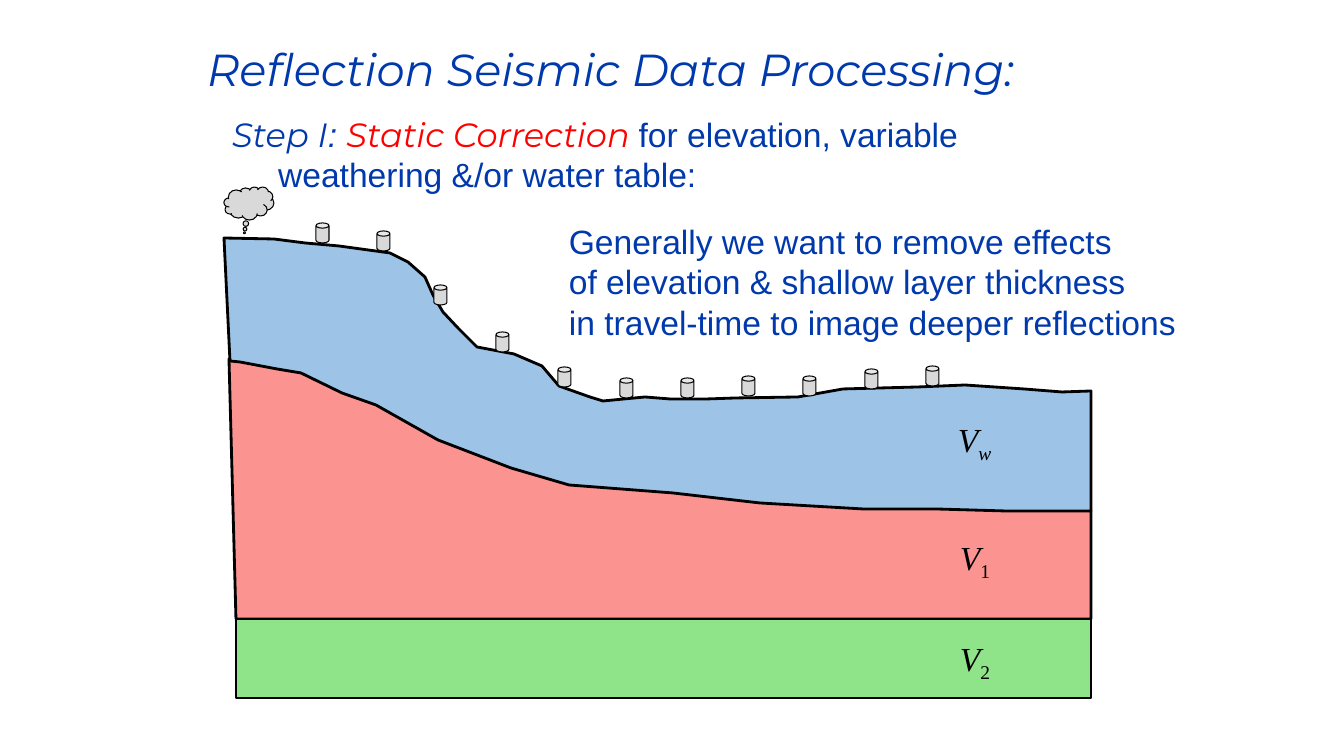
from dataclasses import dataclass
from typing import NamedTuple

from pptx import Presentation
from pptx import util as u
from pptx.dml.color import RGBColor
from pptx.enum import shapes, text
from pptx.oxml.xmlchemy import OxmlElement

SCALE = 914400 / 100.8


@dataclass(frozen=True)
class Theme:
    blue: str = "0039AC"
    red: str = "FF0000"
    black: str = "000000"
    grey: str = "D9D9D9"
    sky: str = "9DC3E6"
    rose: str = "FB9491"
    green: str = "8FE388"
    head: str = "Montserrat"
    body: str = "Arial"
    math: str = "Times New Roman"
    big: int = 32
    mid: int = 24
    thick: float = 2
    thin: float = 0.75


T = Theme()


class Box(NamedTuple):
    left: int
    top: int
    width: int
    height: int


class Run(NamedTuple):
    words: str
    face: str = T.body
    tint: str = T.blue
    slant: bool = False
    size: int = T.mid
    drop: bool = False


class Layer(NamedTuple):
    points: list
    fill: str


class Label(NamedTuple):
    box: Box
    sub: str
    slant: bool


def px(count: int) -> int:
    return round(count * SCALE)


def place(box: Box) -> list[int]:
    return [px(side) for side in box]


def paint(shape, fill: str, weight: float) -> None:
    shape.shadow.inherit = False
    shape.fill.solid()
    shape.fill.fore_color.rgb = RGBColor.from_string(fill)
    shape.line.color.rgb = RGBColor.from_string(T.black)
    shape.line.width = u.Pt(weight)


def add_form(slide, kind, box: Box, fill: str, weight: float, bends=()) -> None:
    shape = slide.shapes.add_shape(kind, *place(box))
    for index, bend in enumerate(bends):
        shape.adjustments[index] = bend
    paint(shape, fill, weight)


def add_layer(slide, layer: Layer) -> None:
    first, *rest = layer.points
    pen = slide.shapes.build_freeform(*first, scale=SCALE)
    pen.add_line_segments(rest, close=True)
    paint(pen.convert_to_shape(), layer.fill, T.thick)


def write(frame, lines: list[list[Run]]) -> None:
    """Fill a frame with one paragraph for each list of runs."""
    for index, runs in enumerate(lines):
        para = frame.add_paragraph() if index else frame.paragraphs[0]
        para.alignment = text.PP_ALIGN.LEFT
        para.space_before = u.Pt(0)
        for item in runs:
            run = para.add_run()
            run.text = item.words
            form = {"name": item.face, "size": u.Pt(item.size),
                    "italic": item.slant, "bold": False}
            for name, value in form.items():
                setattr(run.font, name, value)
            run.font.color.rgb = RGBColor.from_string(item.tint)
            if item.drop:
                run.font._element.set("baseline", "-25000")


def fill_holder(holder, box: Box, lines: list[list[Run]]) -> None:
    """Move a placeholder and give it text."""
    sides = ("left", "top", "width", "height")
    for name, value in zip(sides, place(box)):
        setattr(holder, name, value)
    form = {"word_wrap": True, "auto_size": text.MSO_AUTO_SIZE.NONE,
            "vertical_anchor": text.MSO_ANCHOR.TOP}
    for name, value in form.items():
        setattr(holder.text_frame, name, value)
    write(holder.text_frame, lines)


def unmark(para, margin: int) -> None:
    """Drop the bullet and set the left margin."""
    props = para._p.get_or_add_pPr()
    props.set("marL", str(px(margin)))
    props.set("indent", "0")
    props.append(OxmlElement("a:buNone"))


def add_text(slide, box: Box, lines: list[list[Run]]) -> None:
    frame = slide.shapes.add_textbox(*place(box)).text_frame
    frame.word_wrap = False
    frame.auto_size = text.MSO_AUTO_SIZE.SHAPE_TO_FIT_TEXT
    write(frame, lines)


TITLE = [[Run("Reflection Seismic Data Processing:", T.head, slant=True, size=T.big)]]
STEP = [
    [Run("Step I", T.head, slant=True), Run(": ", slant=True),
     Run("Static Correction ", T.head, T.red, True),
     Run("for elevation, variable")],
    [Run("weathering &/or water table:")],
]
GOAL = [[Run(line)] for line in (
    "Generally we want to remove effects",
    "of elevation & shallow layer thickness",
    "in travel-time to image deeper reflections",
)]
GROUND = [
    (224, 238), (274, 239), (305, 243), (339, 246), (390, 253), (408, 262),
    (425, 277), (433, 295), (443, 312), (458, 328), (477, 347), (514, 354),
    (542, 366), (559, 386), (590, 397), (603, 401), (645, 397), (670, 399),
    (707, 399), (736, 398), (798, 397), (843, 389), (918, 387), (965, 385),
    (1024, 389), (1062, 392), (1091, 391),
]
BASE = [
    (1091, 511), (1006, 511), (936, 509), (863, 509), (760, 503), (673, 493),
    (569, 485), (511, 468), (438, 440), (376, 405), (342, 393), (301, 373),
    (277, 369), (240, 362), (230, 361),
]
LAYERS = [
    Layer([(229, 359), (1091, 511), (1091, 619), (236, 619)], T.rose),
    Layer(GROUND + BASE, T.sky),
]
PHONES = [
    (316, 223), (377, 231), (434, 285), (496, 332), (558, 367), (620, 378),
    (681, 378), (742, 376), (803, 376), (865, 369), (926, 366),
]
LABELS = [
    Label(Box(948, 414, 55, 50), "w", True),
    Label(Box(950, 532, 52, 50), "1", False),
    Label(Box(950, 633, 52, 50), "2", False),
]


def main() -> None:
    deck = Presentation()
    deck.slide_width, deck.slide_height = px(1344), px(756)
    slide = deck.slides.add_slide(deck.slide_layouts[1])
    kinds = shapes.MSO_SHAPE

    fill_holder(slide.shapes.title, Box(197, 37, 919, 65), TITLE)
    body = slide.placeholders[1]
    fill_holder(body, Box(222, 109, 802, 92), STEP)
    for para, margin in zip(body.text_frame.paragraphs, (0, 46)):
        unmark(para, margin)

    for layer in LAYERS:
        add_layer(slide, layer)
    add_form(slide, kinds.RECTANGLE, Box(236, 619, 855, 79), T.green, T.thick)
    add_form(slide, kinds.CLOUD_CALLOUT, Box(224, 187, 50, 33), T.grey, T.thin,
             (-0.09, 0.89))
    for left, top in PHONES:
        add_form(slide, kinds.CAN, Box(left, top, 13, 20), T.grey, T.thin, (0.4,))

    add_text(slide, Box(559, 216, 634, 132), GOAL)
    for label in LABELS:
        add_text(slide, label.box, [[
            Run("V", T.math, T.black, True),
            Run(label.sub, T.math, T.black, label.slant, drop=True),
        ]])
    deck.save("out.pptx")


if __name__ == "__main__":
    main()
